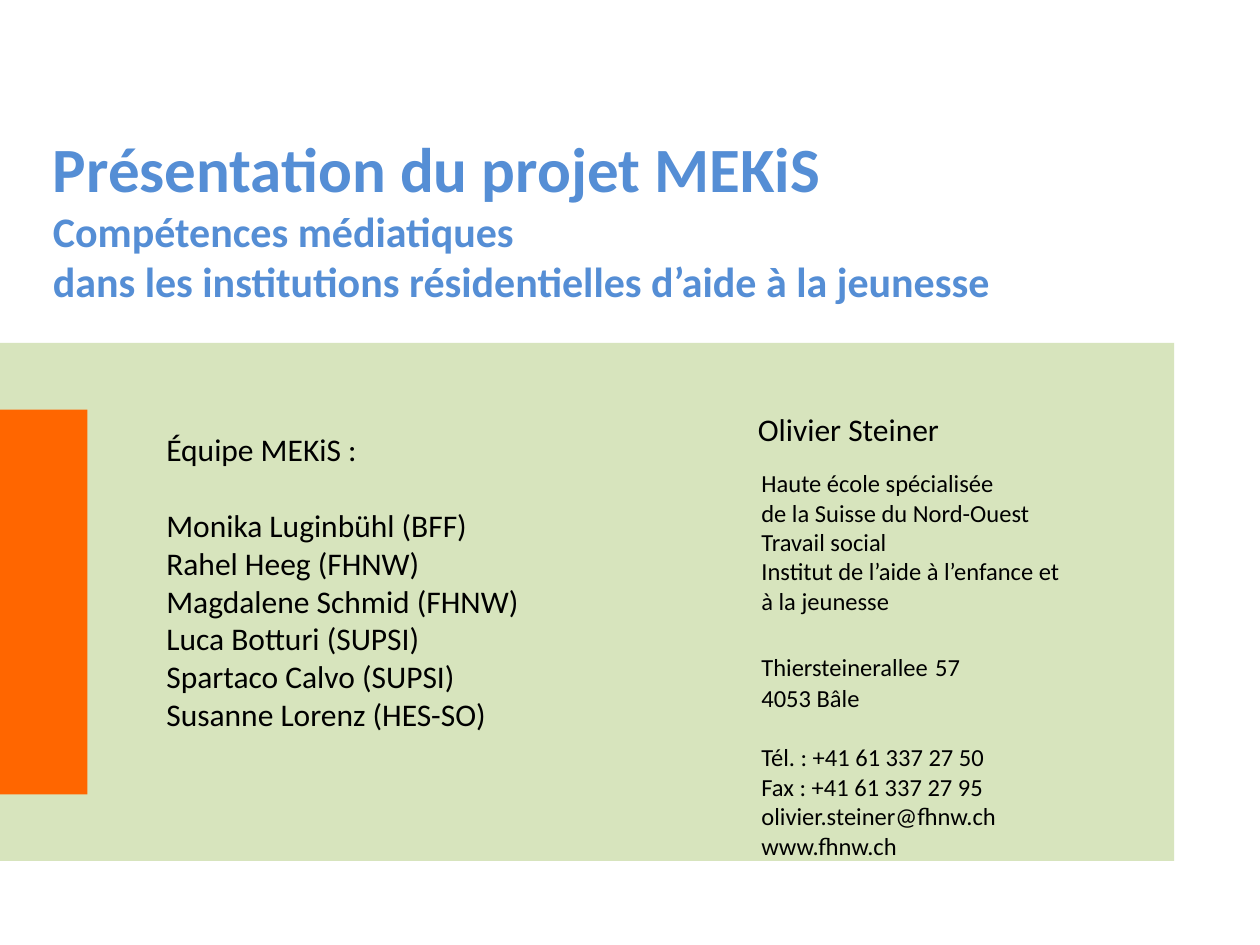
"""Build the title slide of the MEKiS project presentation."""
from pptx import Presentation
from pptx.dml.color import RGBColor
from pptx.enum import text
from pptx.enum.shapes import MSO_SHAPE
from pptx.util import Pt

COLORS = {"panel": "D7E4BD", "accent": "FF6600", "title": "558ED5", "body": "000000"}
FONT = "Calibri"

TITLE = [
    ("Présentation du projet MEKiS", 36),
    ("Compétences médiatiques", 24),
    ("dans les institutions résidentielles d’aide à la jeunesse", 24),
]
TEAM = [
    ["Équipe MEKiS :"],
    [
        "Monika Luginbühl (BFF)",
        "Rahel Heeg (FHNW)",
        "Magdalene Schmid (FHNW)",
        "Luca Botturi (SUPSI)",
        "Spartaco Calvo (SUPSI)",
        "Susanne Lorenz (HES-SO)",
    ],
]
CONTACT = [
    [
        "Haute école spécialisée",
        "de la Suisse du Nord-Ouest",
        "Travail social",
        "Institut de l’aide à l’enfance et",
        "à la jeunesse",
    ],
    ["Thiersteinerallee 57", "4053 Bâle"],
    [
        "Tél. : +41 61 337 27 50",
        "Fax : +41 61 337 27 95",
        "olivier.steiner@fhnw.ch",
        "www.fhnw.ch",
    ],
]


def rgb(name):
    return RGBColor.from_string(COLORS[name])


def place(shape, left, top, width, height):
    shape.left, shape.top = Pt(left), Pt(top)
    shape.width, shape.height = Pt(width), Pt(height)


def style(p, size, color, bold=False):
    p.alignment = text.PP_ALIGN.LEFT
    p.font.name = FONT
    p.font.size = Pt(size)
    p.font.bold = bold
    p.font.color.rgb = rgb(color)


def add_block(s, left, top, width, height, color):
    shape = s.shapes.add_shape(
        MSO_SHAPE.RECTANGLE, Pt(left), Pt(top), Pt(width), Pt(height)
    )
    shape.shadow.inherit = False
    shape.fill.solid()
    shape.fill.fore_color.rgb = rgb(color)
    shape.line.fill.background()


def set_title(s, box):
    place(s.shapes.title, *box)
    tf = s.shapes.title.text_frame
    tf.auto_size = text.MSO_AUTO_SIZE.NONE
    tf.vertical_anchor = text.MSO_ANCHOR.TOP
    tf.text = "\n".join(line for line, _ in TITLE)
    for p, (_, size) in zip(tf.paragraphs, TITLE):
        style(p, size, "title", bold=True)


def add_text(s, box, groups, size, wrap=True):
    tf = s.shapes.add_textbox(*map(Pt, box)).text_frame
    tf.word_wrap = wrap
    tf.text = "\n".join(line for group in groups for line in group)
    starts = [sum(map(len, groups[:i])) for i in range(1, len(groups))]
    for i, p in enumerate(tf.paragraphs):
        style(p, size, "body")
        if i in starts:
            p.space_before = Pt(round(size * 1.22, 1))
    return tf


def enlarge_space(p, size):
    street, number = p.text.rsplit(" ", 1)
    p.runs[0].text = street
    r = p.add_run()
    r.text = " "
    r.font.size = Pt(size)
    p.add_run().text = number


def main():
    prs = Presentation()
    prs.slide_width, prs.slide_height = Pt(720), Pt(540)
    s = prs.slides.add_slide(prs.slide_layouts[5])
    add_block(s, 0, 196, 671, 296, "panel")
    add_block(s, 0, 234, 50, 220, "accent")
    set_title(s, (23, 70.5, 680, 109))
    tf = add_text(s, (428, 264, 280, 233), CONTACT, 14)
    enlarge_space(tf.paragraphs[len(CONTACT[0])], 18)
    add_text(s, (426, 231, 120, 29), [["Olivier Steiner"]], 18, wrap=False)
    add_text(s, (88, 242, 221, 181), TEAM, 18)
    prs.save("out.pptx")


if __name__ == "__main__":
    main()
